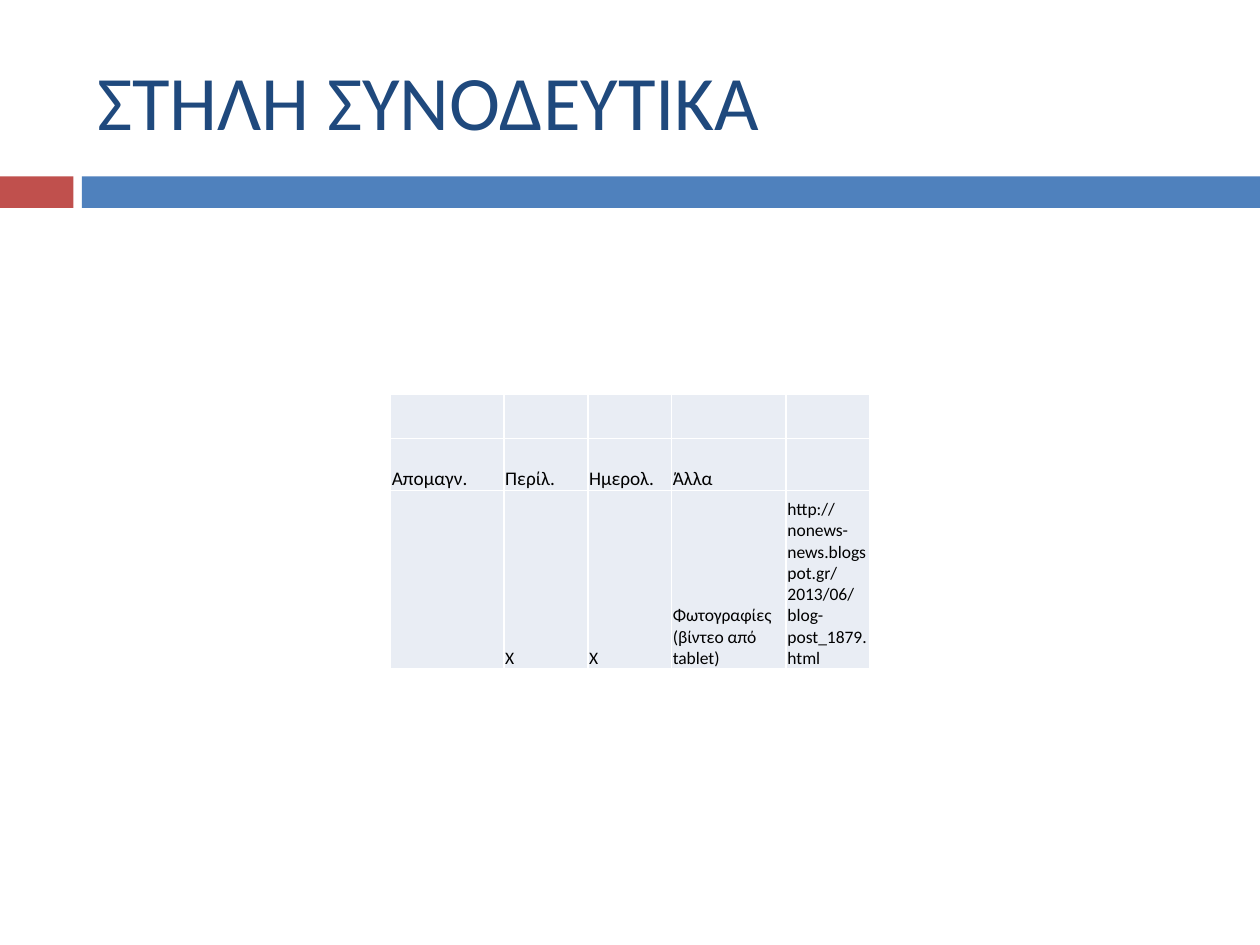
from lxml import etree
from pptx import Presentation, util as u
from pptx.dml.color import RGBColor
from pptx.enum import shapes, text
from pptx.oxml.ns import qn

HUES = {"red": "C0504D", "blue": "4F81BD", "navy": "1F497D",
        "pale": "E9EDF4", "white": "FFFFFF", "black": "000000"}
COLS, ROWS = 100, 75  # grid over the slide


class Deck:
    font = "Calibri"

    def __init__(self, wide, high):
        self.prs = Presentation()
        self.prs.slide_width, self.prs.slide_height = u.Inches(wide), u.Inches(high)
        self.slide = self.prs.slides.add_slide(self.prs.slide_layouts[5])

    def x(self, cols):
        return round(self.prs.slide_width * cols / COLS)

    def y(self, rows):
        return round(self.prs.slide_height * rows / ROWS)

    def box(self, left, top, wide, high):
        return self.x(left), self.y(top), self.x(wide), self.y(high)

    def hue(self, name):
        return RGBColor.from_string(HUES[name])

    def label(self, frame, words, size, hue):
        run = frame.paragraphs[0].add_run()
        run.text = words
        run.font.name, run.font.size = self.font, u.Pt(size)
        run.font.color.rgb = self.hue(hue)

    def title(self, words, *place):
        head = self.slide.shapes.title
        head.left, head.top, head.width, head.height = self.box(*place)
        frame = head.text_frame
        frame.auto_size = text.MSO_AUTO_SIZE.NONE
        frame.vertical_anchor = text.MSO_ANCHOR.MIDDLE
        frame.paragraphs[0].alignment = text.PP_ALIGN.LEFT
        self.label(frame, words, 44, "navy")

    def bar(self, hue, *place):
        rect = self.slide.shapes.add_shape(shapes.MSO_SHAPE.RECTANGLE, *self.box(*place))
        rect.shadow.inherit = False
        rect.fill.solid()
        rect.fill.fore_color.rgb = self.hue(hue)
        rect.line.fill.background()

    def edge(self, cell):
        """Draw a white 1 pt border on all four sides, ahead of the fill."""
        props = cell._tc.get_or_add_tcPr()
        for spot, side in enumerate(("a:lnL", "a:lnR", "a:lnT", "a:lnB")):
            line = etree.Element(qn(side), w=str(u.Pt(1)))
            fill = etree.SubElement(line, qn("a:solidFill"))
            etree.SubElement(fill, qn("a:srgbClr"), val=HUES["white"])
            props.insert(spot, line)

    def table(self, left, top, wides, highs, sizes, rows):
        place = self.box(left, top, sum(wides), sum(highs))
        grid = self.slide.shapes.add_table(len(highs), len(wides), *place).table
        for col, wide in zip(grid.columns, wides):
            col.width = self.x(wide)
        for row, high, size, line in zip(grid.rows, highs, sizes, rows):
            row.height = self.y(high)
            for cell, words in zip(row.cells, line):
                self.cell(cell, words, size)

    def cell(self, cell, words, size):
        cell.fill.solid()
        cell.fill.fore_color.rgb = self.hue("pale")
        self.edge(cell)
        cell.margin_left = cell.margin_right = cell.margin_top = u.Inches(0.01)
        cell.margin_bottom = 0
        cell.vertical_anchor = text.MSO_ANCHOR.BOTTOM
        if words:
            self.label(cell.text_frame, words, size, "black")


def main():
    deck = Deck(10, 7.5)
    deck.bar("red", 0, 14, 5.83, 2.5)
    deck.bar("blue", 6.5, 14, 93.5, 2.5)
    deck.title("ΣΤΗΛΗ ΣΥΝΟΔΕΥΤΙΚΑ", 6.7, 2.5, 89.2, 10.8)
    deck.table(31, 31.3, (9, 6.65, 6.65, 9.1, 6.65), (3.5, 4.15, 14.15), (11, 11, 10), (
        ("", "", "", "", ""),
        ("Απομαγν.", "Περίλ.", "Ημερολ.", "Άλλα", ""),
        ("", "Χ", "Χ", "Φωτογραφίες (βίντεο από tablet)",
         "http://nonews-news.blogspot.gr/2013/06/blog-post_1879.html"),
    ))
    deck.prs.save("out.pptx")


if __name__ == "__main__":
    main()
